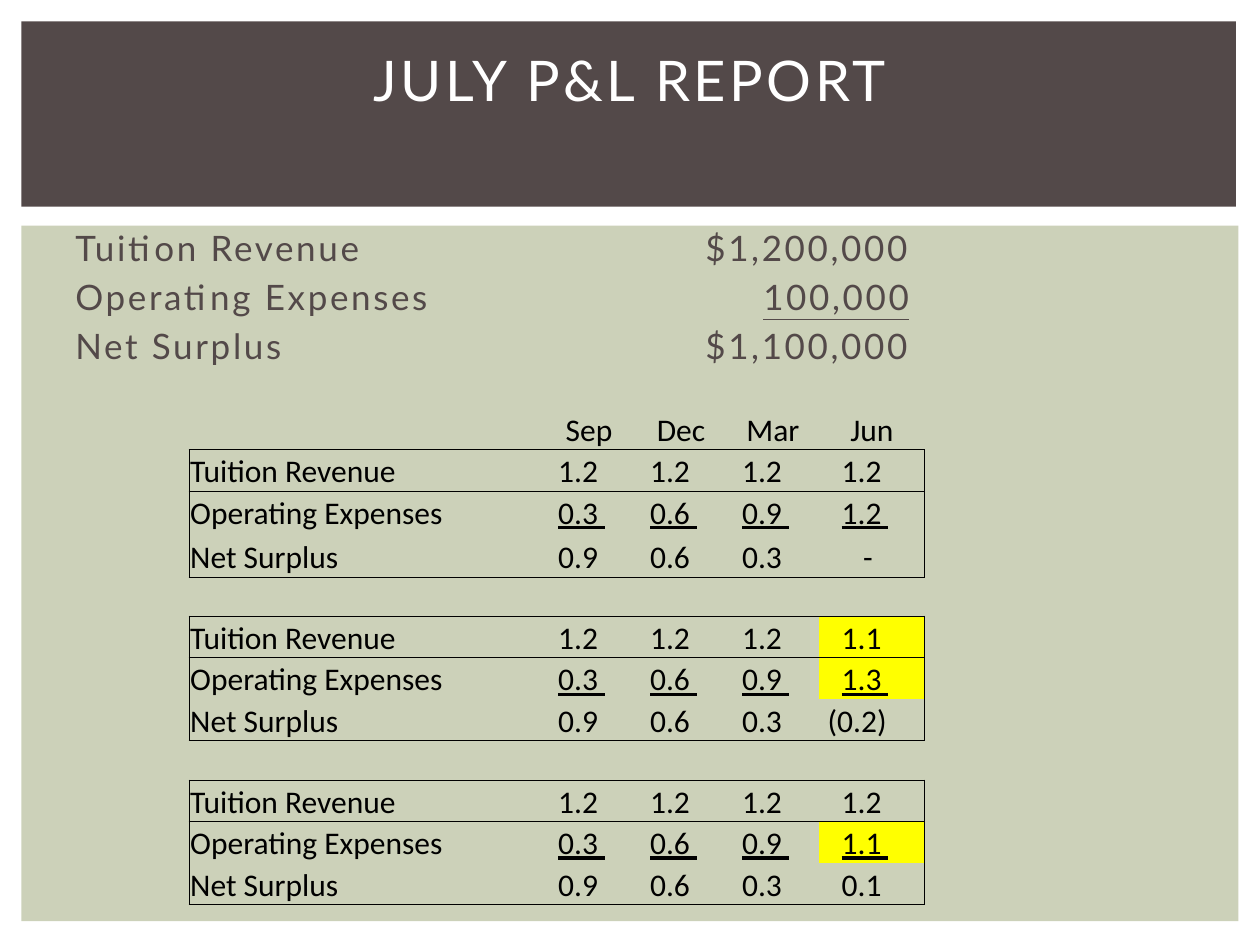
from lxml import etree
from pptx import Presentation
from pptx import util as u
from pptx.dml.color import RGBColor
from pptx.enum import shapes, text
from pptx.oxml.ns import qn

THEME = {
    "sage": RGBColor.from_string("CCD1B9"),
    "brown": RGBColor.from_string("534949"),
    "white": RGBColor.from_string("FFFFFF"),
    "black": RGBColor.from_string("000000"),
    "yellow": RGBColor.from_string("FFFF00"),
    "title": {"name": "Lato", "size": u.Pt(32)},
    "body": {"name": "Lato", "size": u.Pt(20)},
    "table": {"name": "Calibri", "size": u.Pt(18)},
    "plain_table": "{2D5ABB26-0587-4C30-8999-92F81FD0307C}",
}

prs = Presentation()
prs.slide_width, prs.slide_height = u.Inches(10), u.Inches(7.5)
W, H = prs.slide_width / 100, prs.slide_height / 100  # one percent of the slide


def add_run(p, words, style, color, spacing=0, underline=False):
    r = p.add_run()
    r.text = words
    for name, value in THEME[style].items():
        setattr(r.font, name, value)
    r.font.color.rgb = THEME[color]
    r.font.underline = underline
    if spacing:
        r.font._element.set("spc", str(spacing))


def set_tabs(p, stops):
    """Put left tab stops at shares of the slide width."""
    tabs = etree.SubElement(p._p.get_or_add_pPr(), qn("a:tabLst"))
    for stop in stops:
        etree.SubElement(tabs, qn("a:tab"), pos=str(int(stop * W)), algn="l")


s = prs.slides.add_slide(prs.slide_layouts[5])

# Panels
for color, x, y, w, h in [("sage", 1.7, 23.87, 96.6, 73.6),
                          ("brown", 1.7, 2.27, 96.4, 19.6)]:
    sp = s.shapes.add_shape(shapes.MSO_SHAPE.RECTANGLE, int(x * W), int(y * H),
                            int(w * W), int(h * H))
    sp.shadow.inherit = False
    sp.fill.solid()
    sp.fill.fore_color.rgb = THEME[color]
    sp.line.fill.background()

# Title, in front of its panel
title = s.shapes.title
title.element.getparent().append(title.element)
frame = {"left": 5 * W, "top": 0, "width": 90 * W, "height": 16.67 * H}
for name, value in frame.items():
    setattr(title, name, int(value))
title.text_frame.vertical_anchor = text.MSO_ANCHOR.MIDDLE
p = title.text_frame.paragraphs[0]
p.alignment = text.PP_ALIGN.CENTER
add_run(p, "JULY P&L REPORT", "title", "white", spacing=200)

# Annual summary
summary = [("Tuition Revenue\t", "$1,200,000", False),
           ("Operating Expenses\t", "\t100,000", True),
           ("Net Surplus\t", "$1,100,000", False)]
tf = s.shapes.add_textbox(int(5 * W), int(23.33 * H), int(90 * W),
                          int(58.93 * H)).text_frame
tf.word_wrap = True
for i, (label, amount, underline) in enumerate(summary):
    p = tf.paragraphs[0] if i == 0 else tf.add_paragraph()
    p.space_before = u.Pt(4)
    set_tabs(p, [50, 54.6])
    add_run(p, label, "body", "brown", spacing=150)
    add_run(p, amount, "body", "brown", spacing=150, underline=underline)

# Quarterly scenarios: only the June figures change
quarters = ["Sep", "Dec", "Mar", "Jun"]
accounts = [("Tuition Revenue", ["1.2", "1.2", "1.2"]),
            ("Operating Expenses", ["0.3", "0.6", "0.9"]),
            ("Net Surplus", ["0.9", "0.6", "0.3"])]
june = [["1.2", "1.2", "-"], ["1.1", "1.3", "(0.2)"], ["1.2", "1.1", "0.1"]]
highlighted = {(5, 4), (6, 4), (10, 4)}
june_tabs = {"-": 3.4, "(0.2)": 0.6}

rows = [[""] + quarters]
for n, figures in enumerate(june):
    if n:
        rows.append([""] * 5)
    rows += [[label, *values, last]
             for (label, values), last in zip(accounts, figures)]

col_widths = [28.1, 7.3, 7.3, 7.3, 8.4]
row_heights = [4.27, 4.4, 4.4, 4.67] + [4.13, 4.4, 4.4, 4.4] * 2
table = s.shapes.add_table(len(rows), 5, int(15 * W), int(43.33 * H),
                           int(sum(col_widths) * W),
                           int(sum(row_heights) * H)).table
table.first_row = table.horz_banding = False
table._tbl.tblPr.find(qn("a:tableStyleId")).text = THEME["plain_table"]
for column, width in zip(table.columns, col_widths):
    column.width = int(width * W)
for row, height in zip(table.rows, row_heights):
    row.height = int(height * H)

cell_format = {"margin_left": u.Inches(0.01), "margin_right": u.Inches(0.01),
               "margin_top": u.Inches(0.01), "margin_bottom": 0,
               "vertical_anchor": text.MSO_ANCHOR.BOTTOM}
for i, values in enumerate(rows):
    place = i % 4  # 0 header or gap, 1 to 3 the lines of a scenario
    for j, value in enumerate(values):
        cell = table.cell(i, j)
        for name, setting in cell_format.items():
            setattr(cell, name, setting)

        edges = {"a:lnL": place and j == 0, "a:lnR": place and j == 4,
                 "a:lnT": place == 1, "a:lnB": place == 3}
        for tag, drawn in edges.items():
            if drawn:
                ln = etree.SubElement(cell._tc.get_or_add_tcPr(), qn(tag),
                                      w=str(u.Pt(0.5)))
                fill = etree.SubElement(ln, qn("a:solidFill"))
                etree.SubElement(fill, qn("a:srgbClr"), val=str(THEME["black"]))
        if (i, j) in highlighted:
            cell.fill.solid()
            cell.fill.fore_color.rgb = THEME["yellow"]
        else:
            cell.fill.background()

        p = cell.text_frame.paragraphs[0]
        if not value:
            p.font.size = THEME["table"]["size"]
            continue
        if i == 0:
            p.alignment = text.PP_ALIGN.CENTER
        elif j:
            set_tabs(p, [june_tabs.get(value, 1.7) if j == 4 else 1.1])
            value = f"\t{value} "
        add_run(p, value, "table", "black", underline=place == 2 and j > 0)

prs.save("out.pptx")
